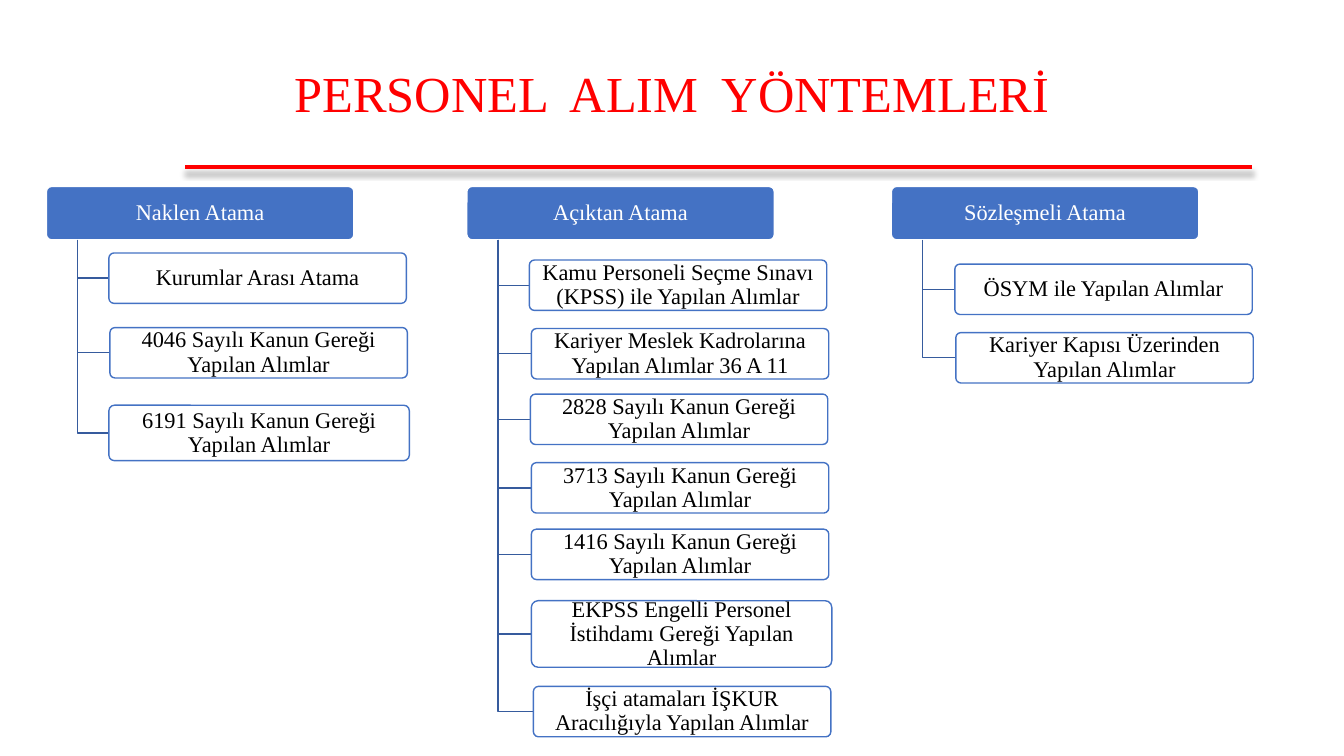
import pptx
import pptx.util
import pptx.dml.color
import pptx.enum.shapes
import pptx.enum.text
import pptx.oxml
import pptx.oxml.ns

Inches = pptx.util.Inches
FONT = "Times New Roman"
BLUE, DARK_BLUE, RED = "4472C4", "365B9D", "FF0000"
WHITE, BLACK = "FFFFFF", "000000"
NAMESPACE = pptx.oxml.ns.nsdecls("a")

HEADER_WIDTH, HEADER_HEIGHT = 3.05, 0.53
TRUNK_INDENT = 0.31
ITEM_WIDTH, ITEM_HEIGHT = 2.95, 0.5
COLUMN_TOP = 1.85

# Each item: text, left and top within its column, then width and height if not the usual ones.
COLUMNS = [
    (0.46, "Naklen Atama", [
        ("Kurumlar Arası Atama", 0.62, 0.66),
        ("4046 Sayılı Kanun Gereği Yapılan Alımlar", 0.63, 1.4),
        ("6191 Sayılı Kanun Gereği Yapılan Alımlar", 0.62, 2.17, 2.98, 0.55),
    ]),
    (8.84, "Sözleşmeli Atama", [
        ("ÖSYM ile Yapılan Alımlar", 0.63, 0.77),
        ("Kariyer Kapısı Üzerinden Yapılan Alımlar", 0.64, 1.45),
    ]),
    (4.63, "Açıktan Atama", [
        ("Kamu Personeli Seçme Sınavı (KPSS) ile Yapılan Alımlar", 0.62, 0.73),
        ("Kariyer Meslek Kadrolarına Yapılan Alımlar 36 A 11", 0.64, 1.41),
        ("2828 Sayılı Kanun Gereği Yapılan Alımlar", 0.63, 2.06),
        ("3713 Sayılı Kanun Gereği Yapılan Alımlar", 0.64, 2.74),
        ("1416 Sayılı Kanun Gereği Yapılan Alımlar", 0.64, 3.4),
        ("EKPSS Engelli Personel İstihdamı Gereği Yapılan Alımlar", 0.64, 4.11, 2.98, 0.66),
        ("İşçi atamaları İŞKUR Aracılığıyla Yapılan Alımlar", 0.66, 4.96),
    ]),
]


def paint(target, color):
    target.rgb = pptx.dml.color.RGBColor.from_string(color)


def stroke(shape, color, width):
    paint(shape.line.color, color)
    shape.line.width = pptx.util.Pt(width)


def write(frame, text, size=16, color=BLACK):
    frame.word_wrap = True
    frame.vertical_anchor = pptx.enum.text.MSO_ANCHOR.MIDDLE
    para = frame.paragraphs[0]
    para.alignment = pptx.enum.text.PP_ALIGN.CENTER
    para.line_spacing = 0.9
    span = para.add_run()
    span.text = text
    span.font.name = FONT
    span.font.size = pptx.util.Pt(size)
    paint(span.font.color, color)


def add_box(page, text, left, top, width, height, fill, line, color, opacity=100):
    box = page.shapes.add_shape(
        pptx.enum.shapes.MSO_SHAPE.ROUNDED_RECTANGLE,
        Inches(left), Inches(top), Inches(width), Inches(height))
    box.adjustments[0] = 0.1
    box.shadow.inherit = False
    box.fill.solid()
    paint(box.fill.fore_color, fill)
    if opacity < 100:
        swatch = box.fill._xPr.find(".//" + pptx.oxml.ns.qn("a:srgbClr"))
        swatch.append(pptx.oxml.parse_xml(f'<a:alpha {NAMESPACE} val="{opacity * 1000}"/>'))
    stroke(box, line, 1)
    frame = box.text_frame
    frame.margin_left = frame.margin_right = Inches(0.04)
    frame.margin_top = frame.margin_bottom = Inches(0.03)
    write(frame, text, color=color)


def add_branch(page, trunk, top, end, middle):
    builder = page.shapes.build_freeform(Inches(trunk), Inches(top))
    builder.add_line_segments(
        [(Inches(trunk), Inches(middle)), (Inches(end), Inches(middle))], close=False)
    branch = builder.convert_to_shape()
    branch.shadow.inherit = False
    branch.fill.background()
    stroke(branch, DARK_BLUE, 1)


def add_column(page, left, top, heading, items):
    add_box(page, heading, left, top, HEADER_WIDTH, HEADER_HEIGHT, BLUE, WHITE, WHITE)
    for text, across, down, *size in items:
        width, height = size or (ITEM_WIDTH, ITEM_HEIGHT)
        add_branch(page, left + TRUNK_INDENT, top + HEADER_HEIGHT,
                   left + across, top + down + height / 2)
        add_box(page, text, left + across, top + down, width, height,
                WHITE, BLUE, BLACK, opacity=90)


def add_title(page, left, top, width, height):
    title = page.shapes.title
    title.left, title.top = Inches(left), Inches(top)
    title.width, title.height = Inches(width), Inches(height)
    write(title.text_frame, "PERSONEL  ALIM  YÖNTEMLERİ\t", size=36, color=RED)
    title.text_frame.auto_size = pptx.enum.text.MSO_AUTO_SIZE.SHAPE_TO_FIT_TEXT


def add_rule(page, left, top, right):
    rule = page.shapes.add_connector(
        pptx.enum.shapes.MSO_CONNECTOR.STRAIGHT,
        Inches(right), Inches(top), Inches(left), Inches(top))
    stroke(rule, RED, 3)
    rule._element.spPr.append(pptx.oxml.parse_xml(
        f'<a:effectLst {NAMESPACE}><a:outerShdw blurRad="50800" dist="50800" dir="5400000">'
        f'<a:srgbClr val="{BLACK}"><a:alpha val="25000"/></a:srgbClr>'
        '</a:outerShdw></a:effectLst>'))


def main():
    deck = pptx.Presentation()
    deck.slide_width, deck.slide_height = Inches(13.33), Inches(7.5)
    page = deck.slides.add_slide(deck.slide_layouts[5])
    add_rule(page, 1.84, 1.66, 12.42)
    add_title(page, 0.92, 0.63, 11.5, 0.65)
    for left, heading, items in COLUMNS:
        add_column(page, left, COLUMN_TOP, heading, items)
    deck.save("out.pptx")


if __name__ == "__main__":
    main()
